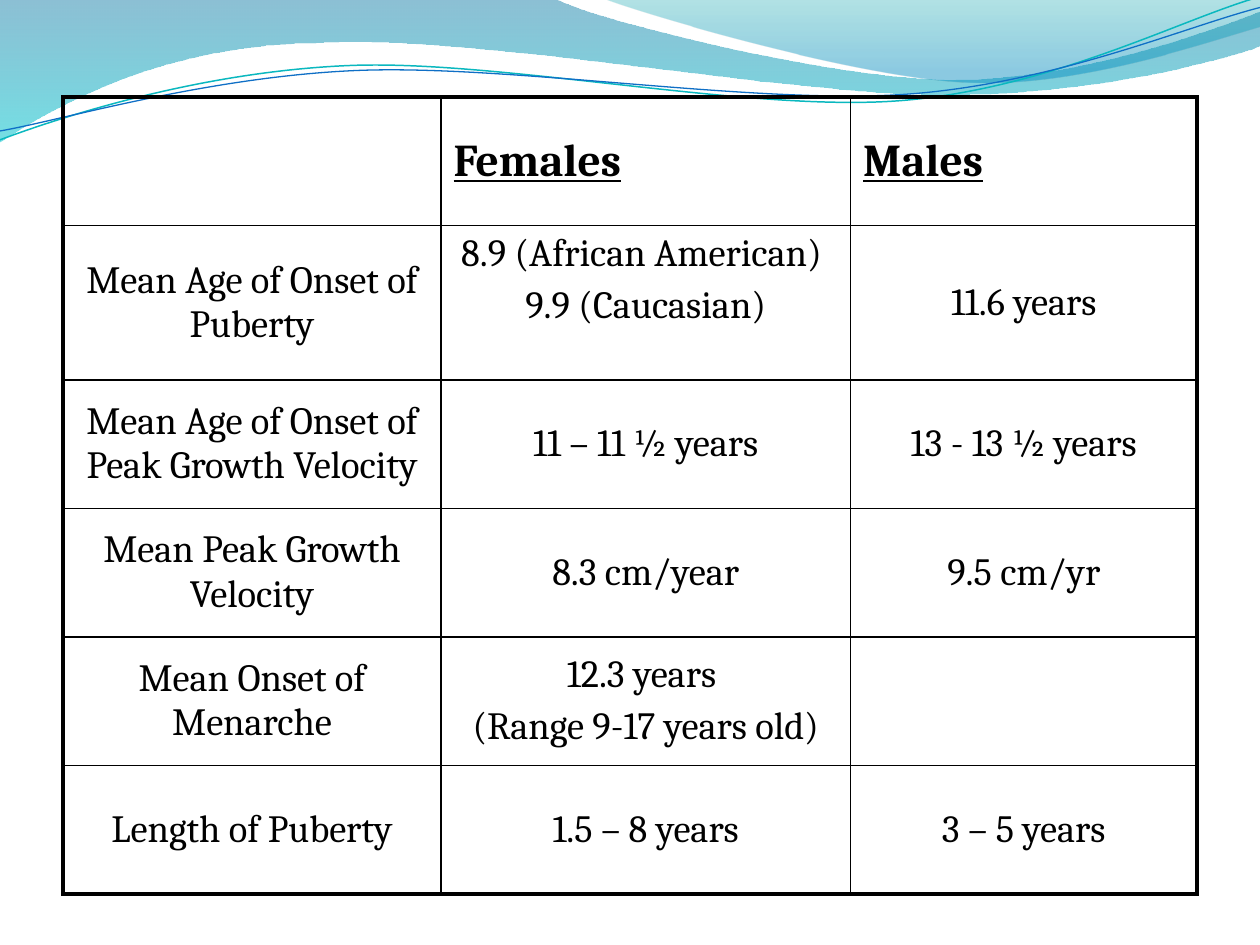
import math

import pptx
import pptx.util
import pptx.dml.color
import pptx.enum.text
import pptx.oxml
import pptx.oxml.ns
from lxml import etree

Inches, Pt, qn = pptx.util.Inches, pptx.util.Pt, pptx.oxml.ns.qn
RGB = pptx.dml.color.RGBColor.from_string
ALIGN = pptx.enum.text.PP_ALIGN

THEME = {
    "font": "Cambria", "ink": "000000", "head": 26, "body": 22,
    "outer": 2.25, "inner": 1,
    # gradient stops: position, colour, opacity in percent
    "left_wave": [(0, "0074A1", 45), (1, "00C6CF", 55)],
    "right_wave": [(0, "00A1A9", 30), (0.8, "008BBF", 45)],
}

prs = pptx.Presentation()
prs.slide_width, prs.slide_height = Inches(10), Inches(7.5)
s = prs.slides.add_slide(prs.slide_layouts[6])


def add_curve(start, segments, close):
    """Draw straight (2 numbers) and cubic (6 numbers) segments, in inches."""
    points = [seg[k:k + 2] for seg in segments for k in range(0, len(seg), 2)]
    builder = s.shapes.build_freeform(Inches(start[0]), Inches(start[1]))
    builder.add_line_segments([(Inches(x), Inches(y)) for x, y in points], close=close)
    sp = builder.convert_to_shape()
    sp.shadow.inherit = False
    # Gather the three points of each cubic segment into one Bezier element
    steps = iter(list(sp.element.spPr.iter(qn("a:lnTo"))))
    for seg in segments:
        first = next(steps)
        if len(seg) == 6:
            bezier = etree.Element(qn("a:cubicBezTo"))
            first.addprevious(bezier)
            for step in (first, next(steps), next(steps)):
                bezier.append(step[0])
                step.getparent().remove(step)
    return sp


waves = [
    ("left_wave", (0, -0.01), [
        (4.4, -0.01), (4.76, 0.17, 6.64, 0.63, 7.58, 0.63),
        (8.53, 0.63, 9.58, 0.26, 10, 0.09), (10.01, 0.36),
        (9.83, 0.44, 8.7, 0.76, 7.46, 0.75), (6.22, 0.75, 3.82, 0.28, 2.57, 0.34),
        (1.29, 0.35, 0.46, 0.83, -0.01, 1.13), (0, -0.01)]),
    ("right_wave", (4.79, -0.01), [
        (5.09, 0.11, 6.82, 0.62, 7.69, 0.65), (8.56, 0.69, 9.61, 0.32, 10, 0.21),
        (10, 0), (4.79, -0.01)]),
]
for name, start, segments in waves:
    sp = add_curve(start, segments, close=True)
    sp.line.fill.background()
    sp.fill.gradient()
    sp.fill.gradient_angle = 270
    for stop, (position, color, _) in zip(sp.fill.gradient_stops, THEME[name]):
        stop.position = position
        stop.color.rgb = RGB(color)
    for clr, (_, _, opacity) in zip(sp.element.spPr.iter(qn("a:srgbClr")), THEME[name]):
        etree.SubElement(clr, qn("a:alpha"), val=str(opacity * 1000))

# Each strand is laid out level about its middle, then tilted as a shape
TILT = 2.7
sin, cos = math.sin(math.radians(TILT)), math.cos(math.radians(TILT))
strands = [
    ("0AB8BF", 0.85, (4.99, 0.57), [
        (0, 1.11), (0.48, 0.93, 1.58, 0.57, 2.77, 0.52),
        (3.95, 0.47, 5.93, 0.89, 7.13, 0.8), (8.33, 0.71, 9.38, 0.15, 9.98, -0.02)]),
    ("0F6FC6", 0.75, (5, 0.59), [
        (0, 1.04), (0.47, 0.96, 1.64, 0.61, 2.83, 0.56),
        (4.03, 0.51, 5.97, 0.83, 7.17, 0.75), (8.36, 0.67, 9.41, 0.21, 10, 0.06)]),
]
for color, width, (cx, cy), segments in strands:
    level = []
    for seg in segments:
        pairs = [(x - cx, y - cy) for x, y in zip(seg[::2], seg[1::2])]
        level.append(sum(((cx + x * cos - y * sin, cy + x * sin + y * cos)
                          for x, y in pairs), ()))
    sp = add_curve(level[0], level[1:], close=False)
    sp.rotation = 360 - TILT
    sp.fill.background()
    sp.line.color.rgb = RGB(color)
    sp.line.width = Pt(width)

rows = [
    ("", "Females", "Males"),
    ("Mean Age of Onset of Puberty", "8.9 (African American) \n9.9 (Caucasian)", "11.6 years"),
    ("Mean Age of Onset of Peak Growth Velocity", "11 – 11 ½ years", "13 - 13 ½ years"),
    ("Mean Peak Growth Velocity", "8.3 cm/year", "9.5 cm/yr"),
    ("Mean Onset of Menarche", "12.3 years \n(Range 9-17 years old)", ""),
    ("Length of Puberty", "1.5 – 8 years", "3 – 5 years"),
]
col_widths = [3, 3.25, 2.75]
row_heights = [1.02, 1.12] + [1.02] * 4
last_row, last_col = len(rows) - 1, len(col_widths) - 1

frame = s.shapes.add_table(len(rows), len(col_widths), Inches(0.5), Inches(0.77),
                           Inches(sum(col_widths)), Inches(sum(row_heights)))
table = frame.table
table.first_row = table.horz_banding = False
for column, width in zip(table.columns, col_widths):
    column.width = Inches(width)
for row, height in zip(table.rows, row_heights):
    row.height = Inches(height)
frame.height = Inches(6.64)

for i, row in enumerate(rows):
    for j, text in enumerate(row):
        cell = table.cell(i, j)
        cell.vertical_anchor = pptx.enum.text.MSO_ANCHOR.MIDDLE
        tcPr = cell._tc.get_or_add_tcPr()
        edges = {"L": j == 0, "R": j == last_col, "T": i == 0, "B": i == last_row}
        for side, is_outer in edges.items():
            width = Pt(THEME["outer" if is_outer else "inner"])
            ln = etree.SubElement(tcPr, qn(f"a:ln{side}"), w=str(width))
            fill = etree.SubElement(ln, qn("a:solidFill"))
            etree.SubElement(fill, qn("a:srgbClr"), val=THEME["ink"])
        cell.fill.background()
        if not text:
            continue
        is_head = i == 0
        cell.text = text
        for p in cell.text_frame.paragraphs:
            p.alignment = ALIGN.LEFT if is_head else ALIGN.CENTER
            before = etree.SubElement(p._p.get_or_add_pPr(), qn("a:spcBef"))
            etree.SubElement(before, qn("a:spcPct"), val="20000")
            font = p.runs[0].font
            style = {"name": THEME["font"], "size": Pt(THEME["head" if is_head else "body"]),
                     "bold": is_head, "underline": is_head}
            for key, value in style.items():
                setattr(font, key, value)
            font.color.rgb = RGB(THEME["ink"])

# The two onset ages sit high in their cell
table.cell(1, 1).margin_bottom = Inches(0.41)

prs.save("out.pptx")
